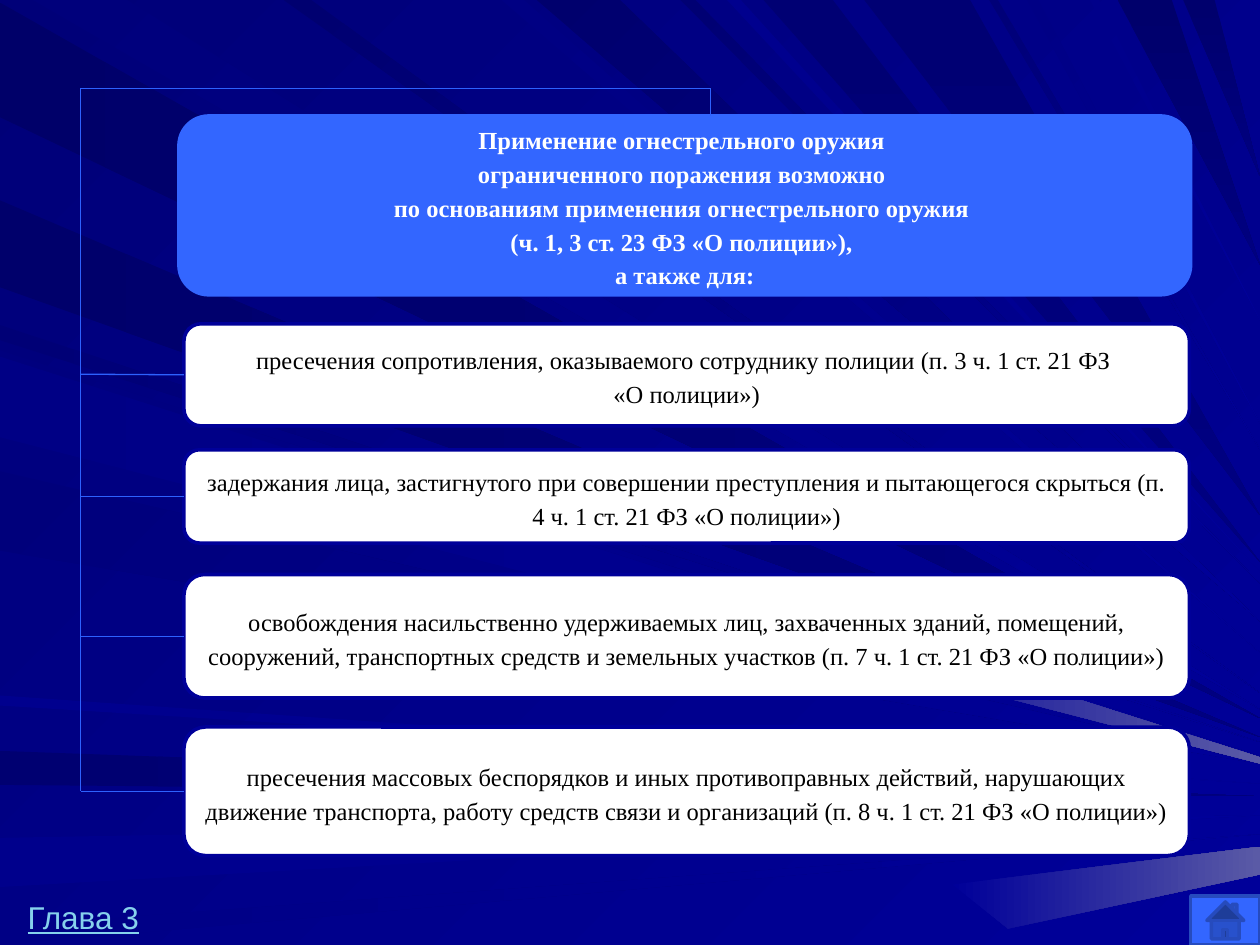
import copy

import pptx
import pptx.util
import pptx.dml.color
import pptx.enum.shapes
import pptx.enum.text
import pptx.oxml
import pptx.oxml.ns

RGB = pptx.dml.color.RGBColor
SHAPE = pptx.enum.shapes.MSO_SHAPE
ALIGN = pptx.enum.text.PP_ALIGN
ANCHOR = pptx.enum.text.MSO_ANCHOR
Pt = pptx.util.Pt
PX = 9144  # EMU in one px, 100 px to the inch
WIDTH, HEIGHT = 1000, 750

BLUE = RGB(0x33, 0x66, 0xFF)
BUTTON_EDGE = RGB(0x26, 0x4B, 0xBD)
BRANCH = RGB(0x2D, 0x61, 0xFE)
NAVY = RGB(0x00, 0x00, 0x99)
DEEP = RGB(0x00, 0x00, 0x80)
NIGHT = RGB(0x00, 0x00, 0x78)
GLOW = RGB(0x5A, 0x5A, 0xA6)
WHITE = RGB(0xFF, 0xFF, 0xFF)
BLACK = RGB(0x00, 0x00, 0x00)
LINK = RGB(0x86, 0xD1, 0xEC)

# Content; \v is a line break inside a paragraph
HEADER = (
    "Применение огнестрельного оружия \n"
    "ограниченного поражения возможно \n"
    "по основаниям применения огнестрельного оружия \v"
    "(ч. 1, 3 ст. 23 ФЗ «О полиции»), \n"
    "а также для:"
)
HEADER_BOX = (142, 92, 803, 142)
GROUND_LEFT, GROUND_WIDTH = 146, 798
# top, height, text
GROUNDS = [
    (257, 81, "пресечения сопротивления, оказываемого сотруднику полиции "
     "(п. 3 ч. 1 ст. 21 ФЗ \v«О полиции»)"),
    (357, 74, "задержания лица, застигнутого при совершении преступления "
     "и пытающегося скрыться (п. 4 ч. 1 ст. 21 ФЗ «О полиции»)"),
    (456, 98, "освобождения насильственно удерживаемых лиц, захваченных зданий, "
     "помещений, сооружений, транспортных средств и земельных участков "
     "(п. 7 ч. 1 ст. 21 ФЗ «О полиции»)"),
    (577, 102, "пресечения массовых беспорядков и иных противоправных действий, "
     "нарушающих движение транспорта, работу средств связи и организаций "
     "(п. 8 ч. 1 ст. 21 ФЗ «О полиции»)"),
]
CHAPTER = "Глава 3"
TRUNK_X, TRUNK_TOP, HEADER_X = 64, 70, 564

# Rays run from the left or top edge to a tip on the right edge.
# side, last colour, angle, rays: start, end, tip height, first blue
RAYS = [
    ("left", DEEP, 0, [(2, 93, 570, "69"), (596, 623, 632, "71"), (159, 228, 585, "6B")]),
    ("top", NAVY, 45, [(26, 101, 563, "7B")]),
    ("left", NAVY, 0, [(665, 704, 647, "8C"), (735, 750, 662, "85"), (258, 270, 589, "76")]),
    ("top", NAVY, 45, [(398, 416, 518, "83"), (426, 492, 493, "6D"), (540, 552, 463, "73")]),
    ("top", DEEP, 90, [(606, 661, 446, "73"), (887, 930, 210, "6B"), (939, 964, 140, "6D")]),
    ("left", NAVY, 45, [(278, 342, 600, "7E"), (374, 437, 606, "7B"), (552, 560, 622, "8E")]),
    ("top", NAVY, 45, [(225, 247, 550, "70"), (577, 588, 454, "8E")]),
    ("top", DEEP, 90, [(686, 770, 409, "73")]),
    ("top", NAVY, 45, [(785, 792, 357, "78"), (815, 824, 336, "85"), (865, 872, 254, "8A")]),
    ("left", NAVY, 0, [(283, 347, 604, "85")]),
]
# Lighter ends at the right edge
GLOWS = [
    [(756, 702), (WIDTH, 672), (WIDTH, 694), (800, 737)],
    [(637, 485), (WIDTH, 601), (WIDTH, 606), (633, 511)],
]


def px(*lengths):
    return [n * PX for n in lengths]


def paint(fill, first, last, angle):
    fill.gradient()
    fill.gradient_angle = -angle % 360
    for stop, color in zip(fill.gradient_stops, (first, last)):
        stop.color.rgb = color


def add_ray(s, corners, first, last, angle):
    builder = s.shapes.build_freeform(*corners[0], scale=PX)
    builder.add_line_segments(corners[1:], close=True)
    ray = builder.convert_to_shape()
    ray.shadow.inherit = False
    ray.line.fill.background()
    paint(ray.fill, first, last, angle)


def add_box(s, kind, box, fill, edge):
    sp = s.shapes.add_shape(kind, *px(*box))
    sp.shadow.inherit = False
    sp.fill.solid()
    sp.fill.fore_color.rgb = fill
    sp.line.color.rgb = edge
    sp.line.width = Pt(2)
    return sp


def write(sp, text, color, bold, after):
    tf = sp.text_frame
    tf.word_wrap = True
    tf.vertical_anchor = ANCHOR.MIDDLE
    tf.text = text
    for p in tf.paragraphs:
        p.alignment = ALIGN.CENTER
        p.line_spacing = 1.15
        p.space_after = Pt(after)
        for r in p.runs:
            r.font.name = "Times New Roman"
            r.font.size = Pt(14)
            r.font.bold = bold
            r.font.color.rgb = color
        # line breaks take the size of the text around them
        for br in p._p.findall(pptx.oxml.ns.qn("a:br")):
            br.insert(0, copy.deepcopy(p.runs[0]._r.rPr))


def add_line(s, x1, y1, x2, y2):
    line = s.shapes.add_connector(pptx.enum.shapes.MSO_CONNECTOR.STRAIGHT, *px(x1, y1, x2, y2))
    line.line.color.rgb = BRANCH
    line.line.width = Pt(0.75)
    line._element.spPr.append(pptx.oxml.parse_xml(
        "<a:effectLst %s/>" % pptx.oxml.ns.nsdecls("a")))
    return line


def main():
    prs = pptx.Presentation()
    prs.slide_width, prs.slide_height = px(WIDTH, HEIGHT)
    s = prs.slides.add_slide(prs.slide_layouts[6])

    # Background
    paint(s.background.fill, NIGHT, NAVY, 45)
    for side, last, angle, rays in RAYS:
        for start, end, tip, blue in rays:
            base = [(0, start), (0, end)] if side == "left" else [(start, 0), (end, 0)]
            add_ray(s, base + [(WIDTH, tip)], RGB.from_string("0000" + blue), last, angle)
    for corners in GLOWS:
        add_ray(s, corners, NAVY, GLOW, 0)

    # Home button
    add_box(s, SHAPE.ACTION_BUTTON_HOME, (945, 711, 55, 39), BLUE, BUTTON_EDGE)

    # Header and grounds, each ground joined to the trunk
    header = add_box(s, SHAPE.ROUNDED_RECTANGLE, HEADER_BOX, BLUE, BLUE)
    write(header, HEADER, WHITE, True, 0)
    for top, height, text in GROUNDS:
        box = (GROUND_LEFT, top, GROUND_WIDTH, height)
        sp = add_box(s, SHAPE.ROUNDED_RECTANGLE, box, WHITE, NAVY)
        write(sp, text, BLACK, False, 10)
        middle = top + height // 2
        add_line(s, GROUND_LEFT, middle, TRUNK_X, middle).begin_connect(sp, 1)

    # Trunk, from the header down to the last ground
    add_line(s, TRUNK_X, TRUNK_TOP, TRUNK_X, middle)
    add_line(s, TRUNK_X, TRUNK_TOP, HEADER_X, TRUNK_TOP)
    add_line(s, HEADER_X, TRUNK_TOP, HEADER_X, HEADER_BOX[1])

    # Chapter label
    tf = s.shapes.add_textbox(*px(12, 708, 109, 40)).text_frame
    tf.word_wrap = False
    tf.auto_size = pptx.enum.text.MSO_AUTO_SIZE.SHAPE_TO_FIT_TEXT
    tf.text = CHAPTER
    font = tf.paragraphs[0].runs[0].font
    font.name = "Arial"
    font.size = Pt(18)
    font.underline = True
    font.color.rgb = LINK

    prs.save("out.pptx")


if __name__ == "__main__":
    main()
